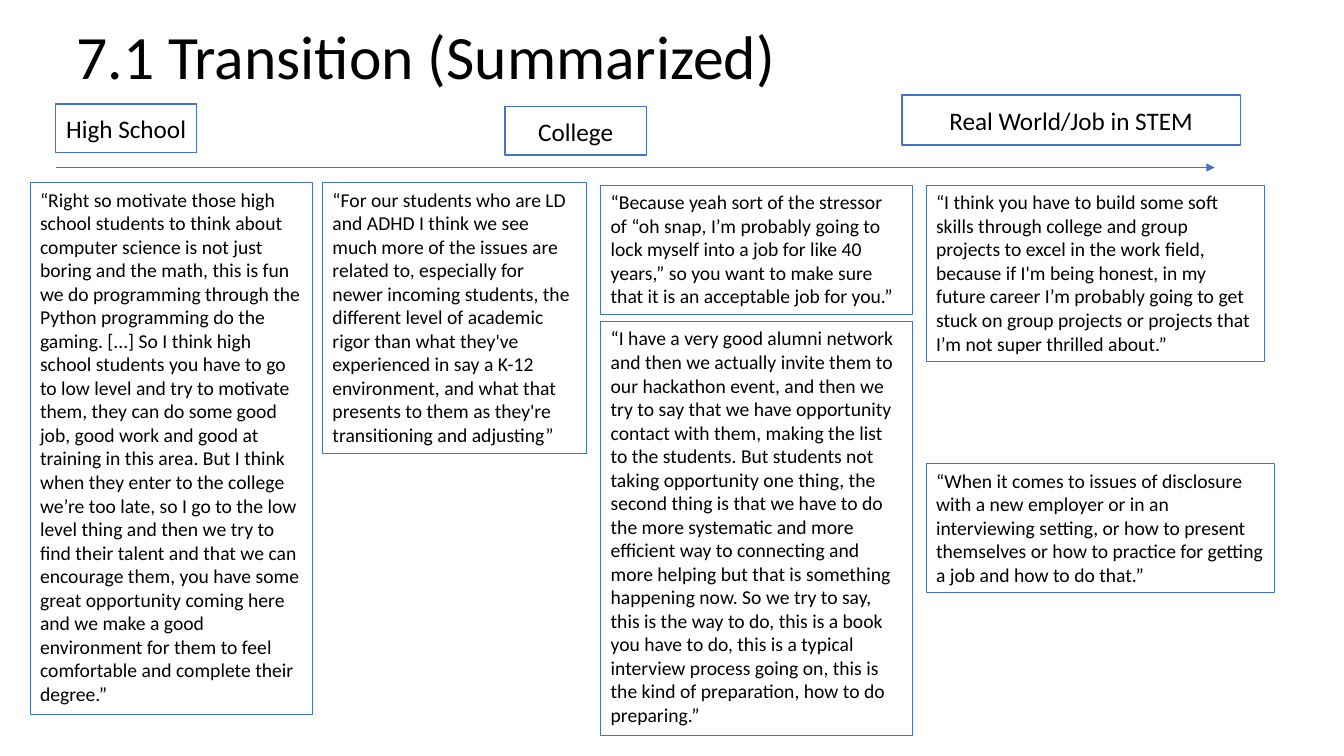
from lxml import etree
from pptx import Presentation
from pptx.dml.color import RGBColor
from pptx.enum.shapes import MSO_CONNECTOR, MSO_SHAPE
from pptx.enum.text import MSO_ANCHOR, MSO_AUTO_SIZE, PP_ALIGN
from pptx.oxml.ns import qn
from pptx.util import Cm, Pt

RECTANGLE = MSO_SHAPE.RECTANGLE
STRAIGHT = MSO_CONNECTOR.STRAIGHT
TOP, MIDDLE = MSO_ANCHOR.TOP, MSO_ANCHOR.MIDDLE
LEFT, CENTER = PP_ALIGN.LEFT, PP_ALIGN.CENTER
GROW, FIXED = MSO_AUTO_SIZE.SHAPE_TO_FIT_TEXT, MSO_AUTO_SIZE.NONE

BLACK = RGBColor(0x00, 0x00, 0x00)
WHITE = RGBColor(0xFF, 0xFF, 0xFF)
BLUE = RGBColor(0x44, 0x72, 0xC4)
FONT = "Calibri"

# Content: boxes are (left, top, width, height) in centimetres
TITLE = "7.1 Transition (Summarized)"
TITLE_BOX = (1.68, 0.36, 29.21, 2.29)

STAGES = [
    ("High School", (1.4, 2.62, 3.56, 1.22)),
    ("College", (12.73, 2.69, 3.56, 1.22)),
    ("Real World/Job in STEM", (22.73, 2.39, 8.53, 1.27)),
]

TIMELINE_START, TIMELINE_END, TIMELINE_Y = 1.4, 30.61, 4.22

# Each column: left edge, then its quotes as (top, width, height, text)
QUOTE_COLUMNS = [
    (0.76, [
        (4.6, 7.11, 13.41,
         "“Right so motivate those high school students to think about computer "
         "science is not just boring and the math, this is fun we do programming "
         "through the Python programming do the gaming. [...] So I think high school "
         "students you have to go to low level and try to motivate them, they can do "
         "some good job, good work and good at training in this area. But I think "
         "when they enter to the college we’re too late, so I go to the low level "
         "thing and then we try to find their talent and that we can encourage them, "
         "you have some great opportunity coming here and we make a good environment "
         "for them to feel comfortable and complete their degree.”"),
    ]),
    (8.13, [
        (4.6, 6.65, 6.83,
         "“For our students who are LD and ADHD I think we see much more of the "
         "issues are related to, especially for newer incoming students, the "
         "different level of academic rigor than what they've experienced in say a "
         "K-12 environment, and what that presents to them as they're transitioning "
         "and adjusting”"),
    ]),
    (15.14, [
        (4.67, 7.85, 3.25,
         "“Because yeah sort of the stressor of “oh snap, I’m probably going to lock "
         "myself into a job for like 40 years,” so you want to make sure that it is "
         "an acceptable job for you.”"),
        (8.1, 7.85, 10.44,
         "“I have a very good alumni network and then we actually invite them to our "
         "hackathon event, and then we try to say that we have opportunity contact "
         "with them, making the list to the students. But students not taking "
         "opportunity one thing, the second thing is that we have to do the more "
         "systematic and more efficient way to connecting and more helping but that "
         "is something happening now. So we try to say, this is the way to do, this "
         "is a book you have to do, this is a typical interview process going on, "
         "this is the kind of preparation, how to do preparing.”"),
    ]),
    (23.34, [
        (4.67, 8.53, 4.45,
         "“I think you have to build some soft skills through college and group "
         "projects to excel in the work field, because if I'm being honest, in my "
         "future career I’m probably going to get stuck on group projects or "
         "projects that I’m not super thrilled about.”"),
        (11.68, 8.79, 3.25,
         "“When it comes to issues of disclosure with a new employer or in an "
         "interviewing setting, or how to present themselves or how to practice for "
         "getting a job and how to do that.”"),
    ]),
]


def add_text(slide, text, box, *, size, anchor=TOP, align=LEFT, wrap=True,
             autosize=FIXED, spacing=1.0, fill=None, border=None):
    """Add a text block; a border width in points makes it a framed box."""
    place = [Cm(length) for length in box]
    if border is None:
        block = slide.shapes.add_textbox(*place)
    else:
        block = slide.shapes.add_shape(RECTANGLE, *place)
        block.shadow.inherit = False
        block.line.color.rgb = BLUE
        block.line.width = Pt(border)
        if fill is None:
            block.fill.background()
        else:
            block.fill.solid()
            block.fill.fore_color.rgb = fill
    frame = block.text_frame
    frame.word_wrap = wrap
    frame.auto_size = autosize
    frame.vertical_anchor = anchor
    paragraph = frame.paragraphs[0]
    paragraph.alignment = align
    paragraph.line_spacing = spacing
    run = paragraph.add_run()
    run.text = text
    run.font.name = FONT
    run.font.size = Pt(size)
    run.font.color.rgb = BLACK


def add_timeline(slide):
    y = Cm(TIMELINE_Y)
    timeline = slide.shapes.add_connector(
        STRAIGHT, Cm(TIMELINE_START), y, Cm(TIMELINE_END), y)
    timeline.line.color.rgb = BLUE
    timeline.line.width = Pt(0.5)
    # Arrowhead and empty effect list need XML
    etree.SubElement(timeline.line._get_or_add_ln(), qn("a:tailEnd"), type="triangle")
    etree.SubElement(timeline._element.spPr, qn("a:effectLst"))


def main():
    deck = Presentation()
    deck.slide_width, deck.slide_height = Cm(33.87), Cm(19.05)
    slide = deck.slides.add_slide(deck.slide_layouts[6])

    # Title and timeline
    add_text(slide, TITLE, TITLE_BOX, size=44, anchor=MIDDLE, spacing=0.9)
    add_timeline(slide)

    # Stage labels above the timeline
    for stage, box in STAGES:
        add_text(slide, stage, box, size=18, anchor=MIDDLE, align=CENTER,
                 wrap=False, fill=WHITE, border=1)

    # Quotes below the timeline
    for left, quotes in QUOTE_COLUMNS:
        for top, width, height, quote in quotes:
            add_text(slide, quote, (left, top, width, height), size=14,
                     autosize=GROW, border=0.75)

    deck.save("out.pptx")


if __name__ == "__main__":
    main()
